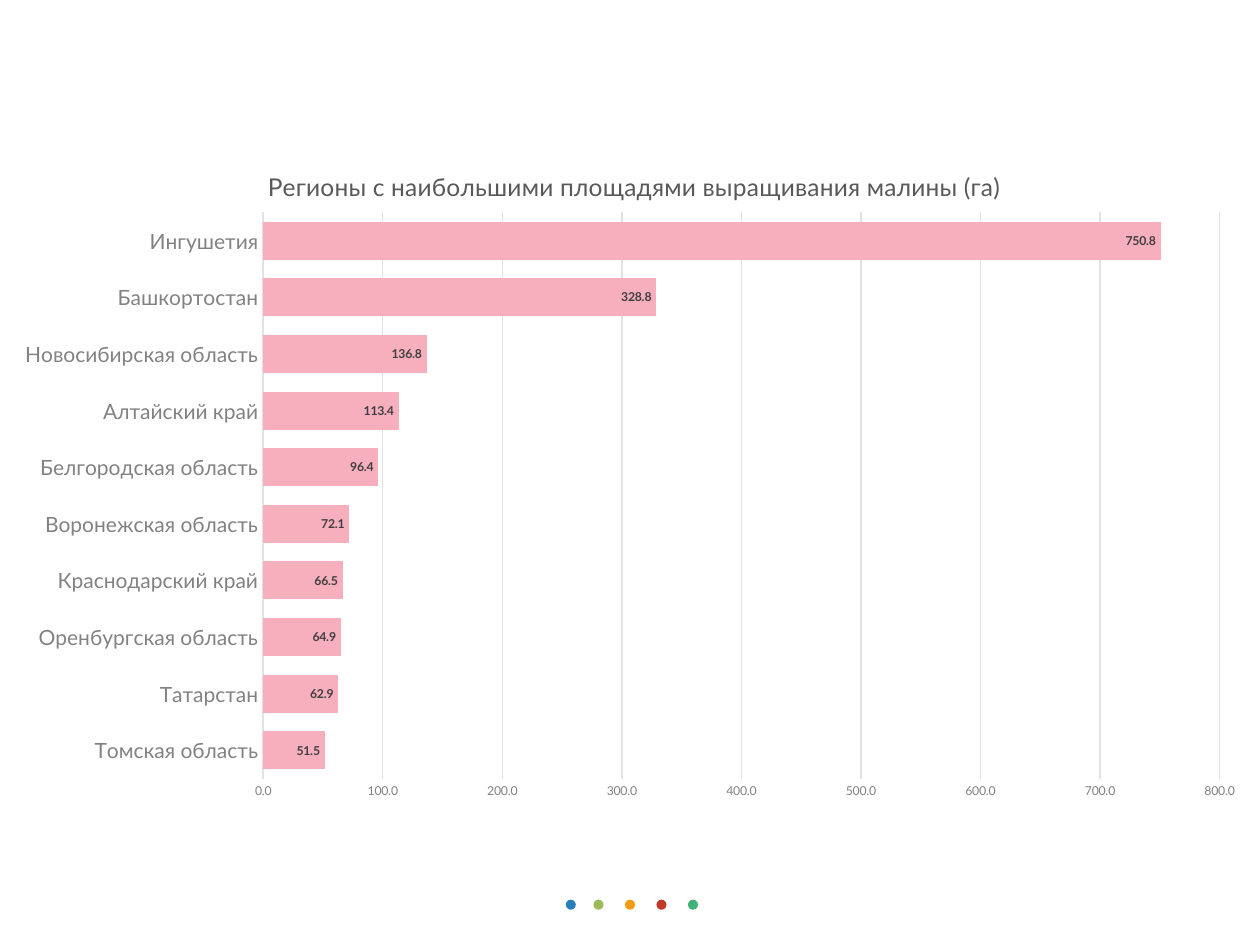
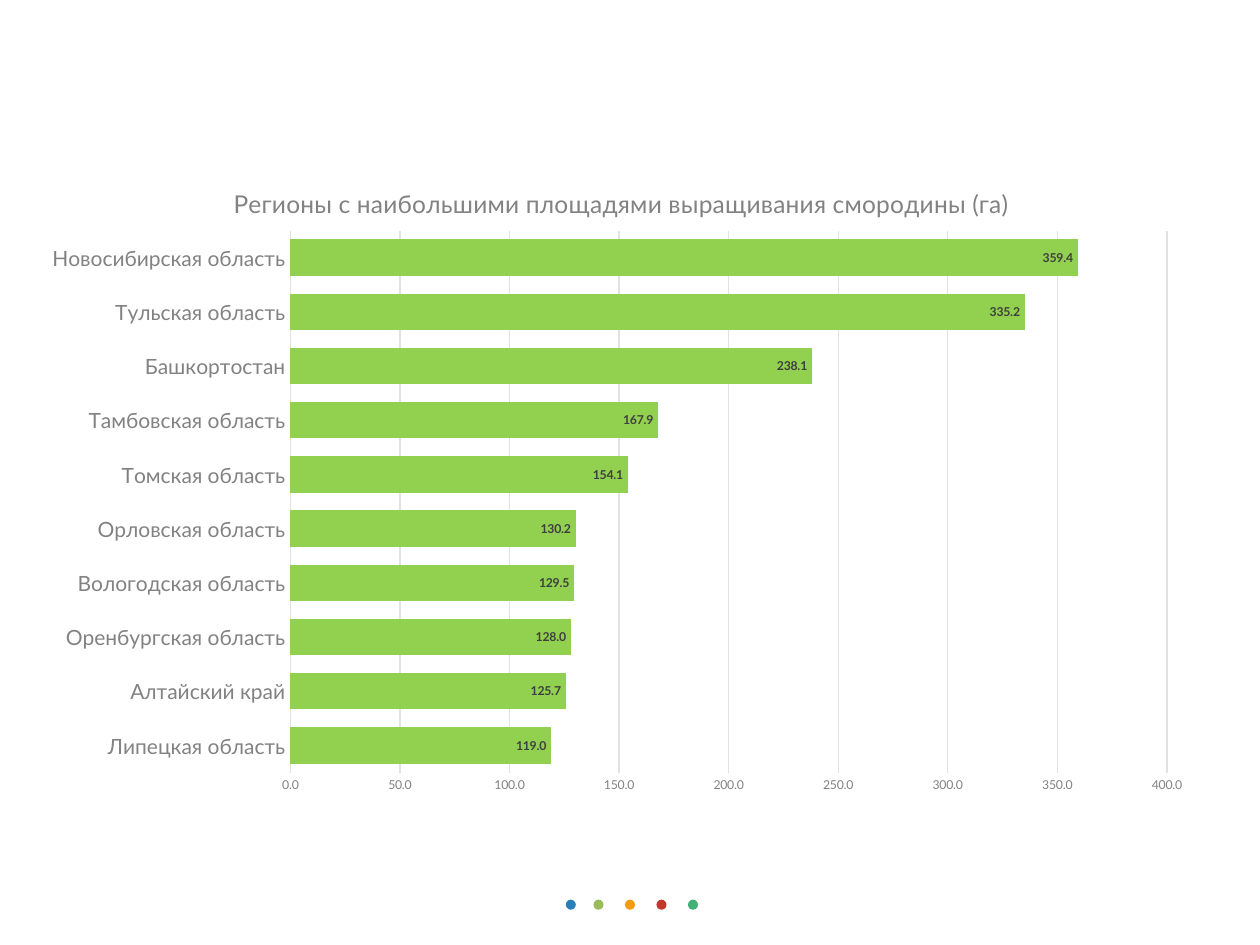
import pptx
import pptx.chart.data
import pptx.dml.color
import pptx.enum.chart
import pptx.enum.shapes
import pptx.util
from lxml import etree

WIDE, HIGH = 10, 7.5
FONT = "Lato"
COLORS = {
    "ink": "3F3F3F", "gray": "828282", "dark": "595959", "grid": "E2E2E2",
    "pink": "F7AFBE", "lime": "92D050",
}
DOTS = {
    0.449: "2980B9", 0.471: "9BBB59", 0.496: "F39C12",
    0.521: "C0392B", 0.546: "41B176",
}
BERRIES = [
    {
        "title": "Регионы с наибольшими площадями выращивания малины (га)",
        "tint": "dark", "fill": "pink", "top": 800, "step": 100,
        "frame": (0, 0.143, 1, 0.717),
        "head": {"x": 0.209, "y": 0.043},
        "plot": {"x": 0.209, "y": 0.114, "w": 0.759, "h": 0.836},
        "areas": {
            "Томская область": 51.5, "Татарстан": 62.9,
            "Оренбургская область": 64.9, "Краснодарский край": 66.5,
            "Воронежская область": 72.1, "Белгородская область": 96.4,
            "Алтайский край": 113.4, "Новосибирская область": 136.8,
            "Башкортостан": 328.8, "Ингушетия": 750.8,
        },
    },
    {
        "title": "Регионы с наибольшими площадями выращивания смородины (га)",
        "tint": "gray", "fill": "lime", "top": 400, "step": 50,
        "frame": (0.022, 0.161, 0.935, 0.692),
        "head": {"x": 0.171, "y": 0.045},
        "plot": {"x": 0.223, "y": 0.12, "w": 0.744, "h": 0.829},
        "areas": {
            "Липецкая область": 119, "Алтайский край": 125.7,
            "Оренбургская область": 128, "Вологодская область": 129.5,
            "Орловская область": 130.2, "Томская область": 154.1,
            "Тамбовская область": 167.9, "Башкортостан": 238.1,
            "Тульская область": 335.2, "Новосибирская область": 359.4,
        },
    },
]


def rgb(code):
    return pptx.dml.color.RGBColor.from_string(code)


def across(share):
    return pptx.util.Inches(WIDE * share)


def down(share):
    return pptx.util.Inches(HIGH * share)


def style(font, size, tint, bold=False):
    font.name = FONT
    font.size = pptx.util.Pt(size)
    font.color.rgb = rgb(COLORS[tint])
    font.bold = bold


def rule(line, width):
    line.color.rgb = rgb(COLORS["grid"])
    line.width = pptx.util.Pt(width)


def place(node, index, shares, inner=False):
    space = "{" + node.nsmap["c"] + "}"
    old = node.find(space + "layout")
    if old is not None:
        node.remove(old)
    layout = etree.Element(space + "layout")
    manual = etree.SubElement(layout, space + "manualLayout")
    marks = {"layoutTarget": "inner"} if inner else {}
    marks.update(xMode="edge", yMode="edge", **shares)
    for tag, value in marks.items():
        etree.SubElement(manual, space + tag).set("val", str(value))
    node.insert(index, layout)


def add_dots(slide):
    for left, code in DOTS.items():
        dot = slide.shapes.add_shape(
            pptx.enum.shapes.MSO_SHAPE.OVAL, across(left), down(0.952),
            across(0.008), across(0.008))
        dot.shadow.inherit = False
        dot.fill.solid()
        dot.fill.fore_color.rgb = rgb(code)
        dot.line.fill.background()


def set_title(chart, berry):
    chart.has_title = True
    title = chart.chart_title
    title.include_in_layout = False
    para = title.text_frame.paragraphs[0]
    para.text = berry["title"]
    style(para.font, 14, berry["tint"])
    place(title.text_frame._txBody.getparent().getparent(), 1, berry["head"])


def set_axes(chart, berry):
    for axis, size in (chart.category_axis, 12), (chart.value_axis, 7):
        axis.major_tick_mark = pptx.enum.chart.XL_TICK_MARK.NONE
        axis.minor_tick_mark = pptx.enum.chart.XL_TICK_MARK.NONE
        style(axis.tick_labels.font, size, "gray")
    rule(chart.category_axis.format.line, 1)
    scale = chart.value_axis
    scale.minimum_scale = 0
    scale.maximum_scale = berry["top"]
    scale.major_unit = berry["step"]
    scale.format.line.fill.background()
    rule(scale.major_gridlines.format.line, 0.75)
    scale.tick_labels.number_format = "0.0"
    scale.tick_labels.number_format_is_linked = False


def set_bars(plot, berry):
    plot.gap_width = 49
    plot.overlap = -10
    plot.vary_by_categories = False
    bars = plot.series[0]
    bars.format.fill.solid()
    bars.format.fill.fore_color.rgb = rgb(COLORS[berry["fill"]])
    labels = bars.data_labels
    labels.show_value = True
    labels.position = pptx.enum.chart.XL_LABEL_POSITION.INSIDE_END
    labels.number_format = "0.0"
    labels.number_format_is_linked = False
    style(labels.font, 7, "ink", True)


def add_bars(slide, berry):
    data = pptx.chart.data.CategoryChartData(number_format="0.0")
    data.categories = list(berry["areas"])
    data.add_series("Series 1", list(berry["areas"].values()))
    left, top, width, height = berry["frame"]
    chart = slide.shapes.add_chart(
        pptx.enum.chart.XL_CHART_TYPE.BAR_CLUSTERED, across(left), down(top),
        across(width), down(height), data).chart
    style(chart.font, 10, "ink")
    chart.has_legend = False
    set_title(chart, berry)
    set_axes(chart, berry)
    set_bars(chart.plots[0], berry)
    area = chart.value_axis.major_gridlines._xAx.getparent()
    place(area, 0, berry["plot"], inner=True)


def main():
    deck = pptx.Presentation()
    deck.slide_width = across(1)
    deck.slide_height = down(1)
    for berry in BERRIES:
        slide = deck.slides.add_slide(deck.slide_layouts[6])
        add_dots(slide)
        add_bars(slide, berry)
    deck.save("out.pptx")


if __name__ == "__main__":
    main()
